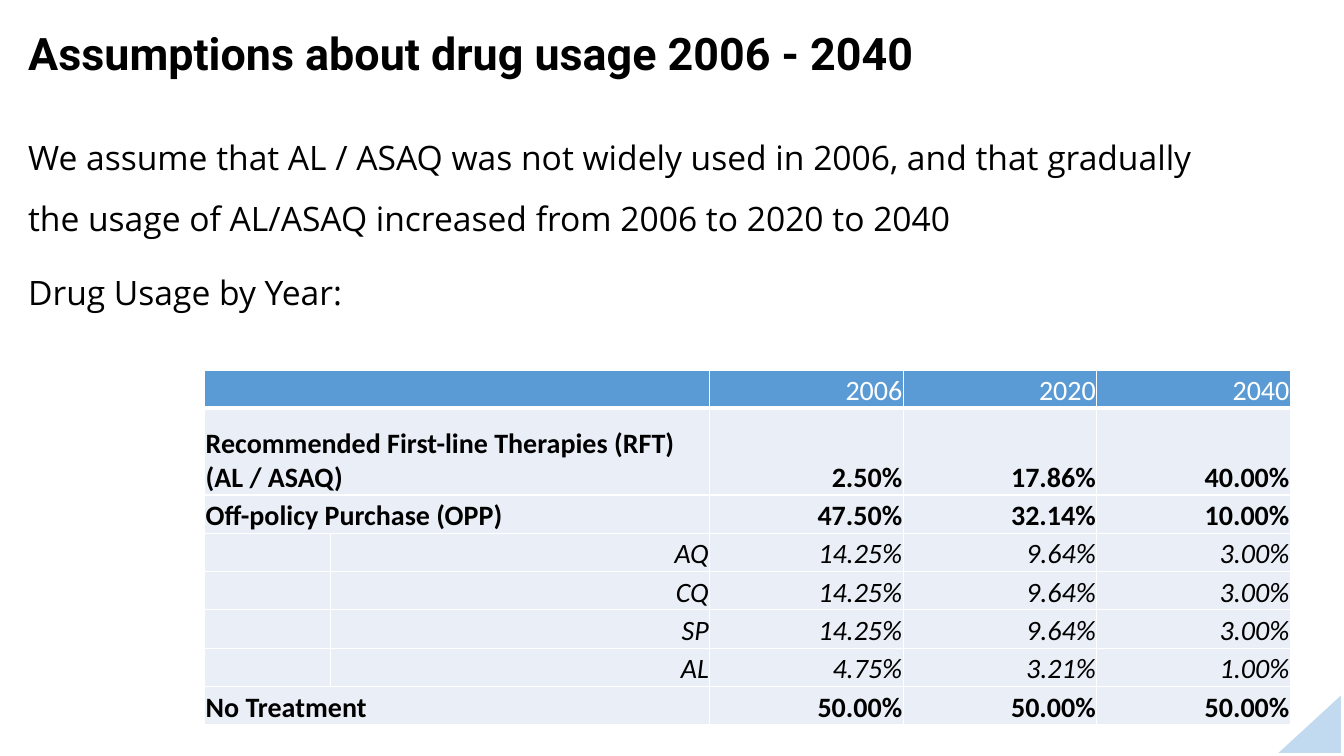
"""Build the slide on assumed drug usage from 2006 to 2040."""
from lxml import etree
from pptx import Presentation
from pptx.dml.color import RGBColor
from pptx.enum import shapes, text
from pptx.oxml.ns import qn
from pptx.util import Inches, Pt

COLORS = {"ink": "000000", "paper": "FFFFFF", "accent": "5B9BD5", "row": "EAEFF7"}
YEARS = ["2006", "2020", "2040"]
USAGE = [
    ("Recommended First-line Therapies (RFT) (AL / ASAQ)", "2.50%", "17.86%", "40.00%"),
    ("Off-policy Purchase (OPP)", "47.50%", "32.14%", "10.00%"),
    ("AQ", "14.25%", "9.64%", "3.00%"),
    ("CQ", "14.25%", "9.64%", "3.00%"),
    ("SP", "14.25%", "9.64%", "3.00%"),
    ("AL", "4.75%", "3.21%", "1.00%"),
    ("No Treatment", "50.00%", "50.00%", "50.00%"),
]
DRUGS = {"AQ", "CQ", "SP", "AL"}
ASSUMPTIONS = [
    "We assume that AL / ASAQ was not widely used in 2006, and that gradually "
    "the usage of AL/ASAQ increased from 2006 to 2020 to 2040",
    "Drug Usage by Year:",
]


class UsageSlide:
    """Hold the style and the slide, and add each kind of element."""

    def __init__(self, deck):
        self.slide = deck.slides.add_slide(deck.slide_layouts[5])

    def color(self, name):
        return RGBColor.from_string(COLORS[name])

    def style(self, paragraph, face, size, ink="ink", bold=False, italic=False):
        font = paragraph.font
        font.name, font.size = face, Pt(size)
        font.bold, font.italic = bold, italic
        font.color.rgb = self.color(ink)

    def place(self, shape, left, top, width, height):
        shape.left, shape.top = Inches(left), Inches(top)
        shape.width, shape.height = Inches(width), Inches(height)

    def corner(self, left, top, width, height):
        triangle = self.slide.shapes.add_shape(
            shapes.MSO_SHAPE.RIGHT_TRIANGLE,
            Inches(left), Inches(top), Inches(width), Inches(height))
        triangle.shadow.inherit = False
        triangle.line.fill.background()
        triangle.fill.solid()
        triangle.fill.fore_color.rgb = self.color("accent")
        properties = triangle.element.spPr
        properties.find(qn("a:xfrm")).set("flipH", "1")
        tint = properties.find(qn("a:solidFill"))[0]
        etree.SubElement(tint, qn("a:alpha")).set("val", "37000")

    def title(self, wording, *box):
        heading = self.slide.shapes.title
        self.place(heading, *box)
        frame = heading.text_frame
        frame.text = wording
        frame.word_wrap = True
        frame.auto_size = text.MSO_AUTO_SIZE.NONE
        frame.vertical_anchor = text.MSO_ANCHOR.MIDDLE
        line = frame.paragraphs[0]
        line.alignment = text.PP_ALIGN.LEFT
        line.line_spacing = 0.9
        self.style(line, "Roboto", 32, bold=True)

    def body(self, wordings, left, top, width, height):
        frame = self.slide.shapes.add_textbox(
            Inches(left), Inches(top), Inches(width), Inches(height)).text_frame
        frame.word_wrap = True
        frame.text = "\n".join(wordings)
        for line in frame.paragraphs:
            line.line_spacing = 1.5
            line.space_before = Pt(10)
            self.style(line, "Open Sans", 24)

    def cell(self, cell, wording, fill, bottom=1, align=text.PP_ALIGN.RIGHT, **look):
        cell.text = wording
        cell.vertical_anchor = text.MSO_ANCHOR.BOTTOM
        cell.margin_left = cell.margin_right = cell.margin_top = Inches(0.01)
        cell.margin_bottom = 0
        line = cell.text_frame.paragraphs[0]
        line.alignment = align
        self.style(line, "Calibri", 20, **look)
        cell.fill.solid()
        cell.fill.fore_color.rgb = self.color(fill)
        properties = cell._tc.get_or_add_tcPr()
        for position, side in enumerate("LRTB"):
            border = etree.Element(qn(f"a:ln{side}"))
            border.set("w", str(Pt(bottom if side == "B" else 1)))
            paint = etree.SubElement(border, qn("a:solidFill"))
            etree.SubElement(paint, qn("a:srgbClr")).set("val", COLORS["paper"])
            properties.insert(position, border)

    def table(self, left, top, widths, heights):
        table = self.slide.shapes.add_table(
            len(heights), len(widths), Inches(left), Inches(top),
            Inches(sum(widths)), Inches(sum(heights))).table
        table.first_row = table.horz_banding = False
        for column, width in zip(table.columns, widths):
            column.width = Inches(width)
        for row, height in zip(table.rows, heights):
            row.height = Inches(height)
        for column, year in enumerate(["", "", *YEARS]):
            self.cell(table.cell(0, column), year, "accent", bottom=3, ink="paper")
        table.cell(0, 0).merge(table.cell(0, 1))
        for row, (label, *shares) in enumerate(USAGE, 1):
            drug = label in DRUGS
            look = {"bold": not drug, "italic": drug}
            names = ["", label] if drug else [label, ""]
            for column, wording in enumerate(names + shares):
                side = text.PP_ALIGN.RIGHT if column else text.PP_ALIGN.LEFT
                self.cell(table.cell(row, column), wording, "row", align=side, **look)
            if not drug:
                table.cell(row, 0).merge(table.cell(row, 1))


def main():
    deck = Presentation()
    deck.slide_width, deck.slide_height = Inches(13.33), Inches(7.5)
    page = UsageSlide(deck)
    page.corner(12.68, 6.9, 0.62, 0.57)
    page.title("Assumptions about drug usage 2006 - 2040", 0.18, 0, 11.5, 1.11)
    page.body(ASSUMPTIONS, 0.18, 1.11, 12.21, 2.13)
    page.table(2.03, 3.67, [1.25, 3.76] + [1.92] * 3, [0.38, 0.86] + [0.38] * 6)
    deck.save("out.pptx")


if __name__ == "__main__":
    main()
